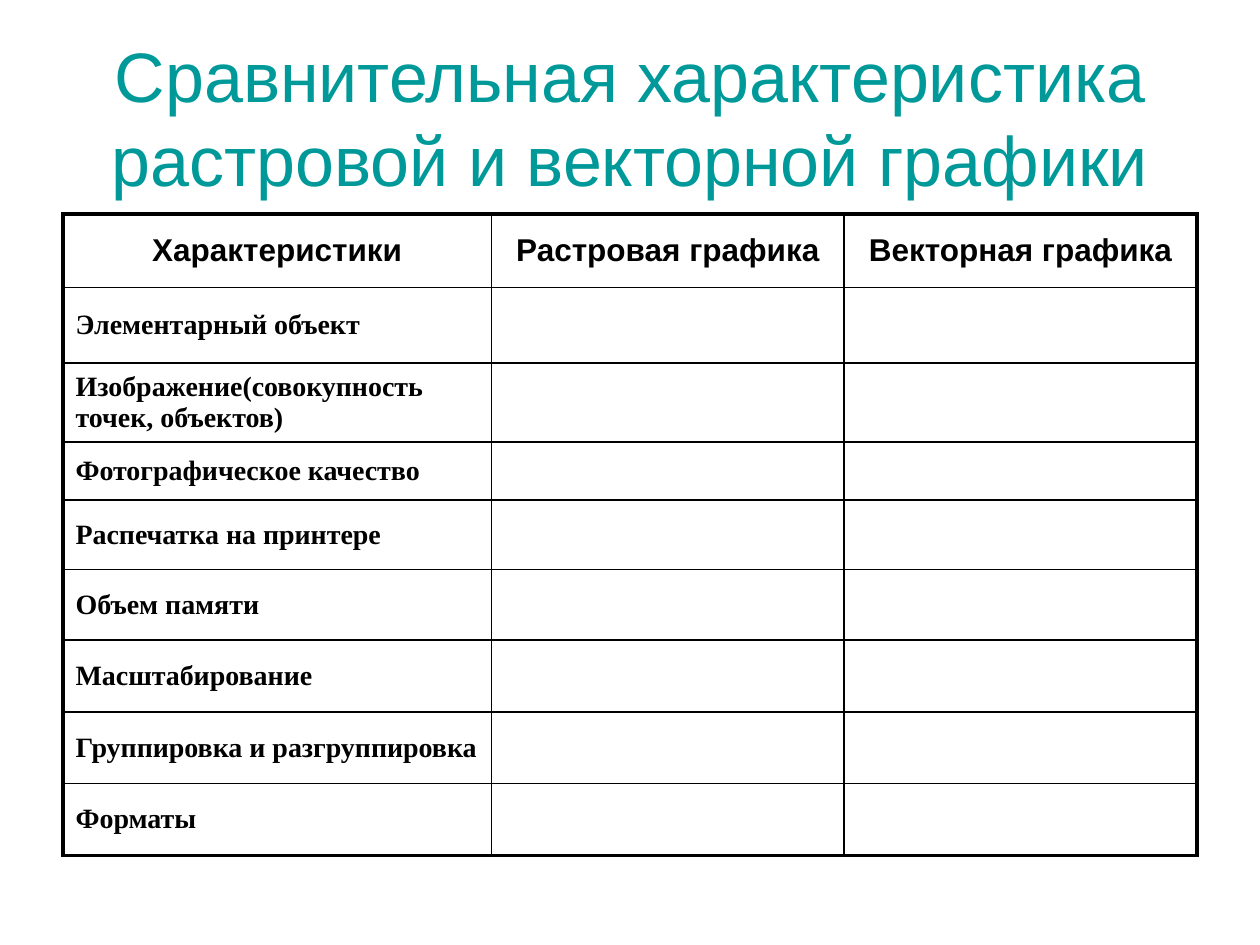
from dataclasses import dataclass

from lxml import etree
from pptx import Presentation
from pptx.dml.color import RGBColor
from pptx.enum import text
from pptx.oxml.ns import qn
from pptx.util import Inches, Pt


@dataclass(frozen=True)
class Theme:
    teal: str = "009999"
    black: str = "000000"
    sans: str = "Arial"
    serif: str = "Times New Roman"
    title: int = 40
    head: int = 18
    body: int = 16
    thin: float = 1
    thick: float = 2.25


theme = Theme()


def style(para, face, size, color, bold, align):
    para.alignment = align
    para.font.name = face
    para.font.size = Pt(size)
    para.font.bold = bold
    para.font.color.rgb = RGBColor.from_string(color)


def border(cell, side, width):
    """Draw one cell edge; side is L, R, T or B."""
    props = cell._tc.get_or_add_tcPr()
    line = etree.SubElement(props, qn(f"a:ln{side}"), w=str(Pt(width)))
    fill = etree.SubElement(line, qn("a:solidFill"))
    etree.SubElement(fill, qn("a:srgbClr"), val=theme.black)


deck = Presentation()
deck.slide_width, deck.slide_height = Inches(10), Inches(7.5)
slide = deck.slides.add_slide(deck.slide_layouts[5])

title = slide.shapes.title
title.left, title.top = Inches(0.5), Inches(0.3)
title.width, title.height = Inches(9), Inches(1.25)
frame = title.text_frame
frame.text = "Сравнительная характеристика растровой и векторной графики"
frame.word_wrap = True
frame.auto_size = text.MSO_AUTO_SIZE.NONE
frame.vertical_anchor = text.MSO_ANCHOR.MIDDLE
style(frame.paragraphs[0], theme.sans, theme.title, theme.teal, False,
      text.PP_ALIGN.CENTER)

heads = ["Характеристики", "Растровая графика", "Векторная графика"]
traits = [
    "Элементарный объект",
    "Изображение(совокупность точек, объектов)",
    "Фотографическое качество",
    "Распечатка на принтере",
    "Объем памяти",
    "Масштабирование",
    "Группировка и разгруппировка",
    "Форматы",
]
rows = [heads] + [[trait, "", ""] for trait in traits]
widths = [3.4, 2.8, 2.8]
heights = [0.58, 0.6, 0.63, 0.46, 0.55, 0.56, 0.57, 0.57, 0.57]

table = slide.shapes.add_table(
    len(rows), len(heads), Inches(0.5), Inches(1.7),
    Inches(sum(widths)), Inches(sum(heights))).table
table.first_row = table.horz_banding = False
for col, width in zip(table.columns, widths):
    col.width = Inches(width)
for row, height in zip(table.rows, heights):
    row.height = Inches(height)

for r, words in enumerate(rows):
    for c, word in enumerate(words):
        cell = table.cell(r, c)
        cell.text = word
        cell.vertical_anchor = text.MSO_ANCHOR.MIDDLE
        para = cell.text_frame.paragraphs[0]
        if r == 0:
            style(para, theme.sans, theme.head, theme.black, True,
                  text.PP_ALIGN.CENTER)
        else:
            style(para, theme.serif, theme.body, theme.black, True,
                  text.PP_ALIGN.LEFT)
        outer = {"L": c == 0, "R": c == len(heads) - 1,
                 "T": r == 0, "B": r == len(rows) - 1}
        for side, edge in outer.items():
            border(cell, side, theme.thick if edge else theme.thin)
        cell.fill.background()

deck.save("out.pptx")
